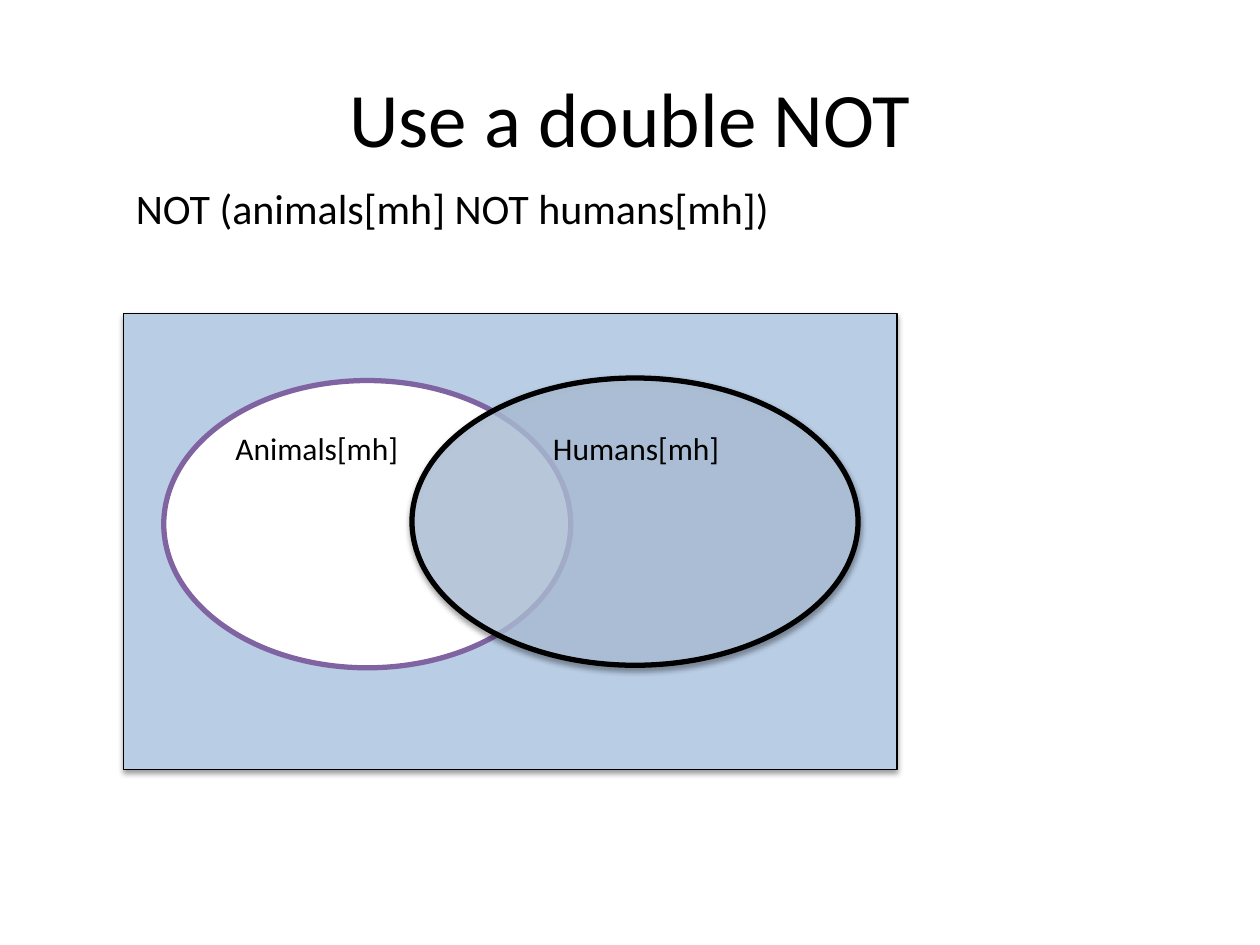
from lxml import etree
from pptx import Presentation
from pptx.dml.color import RGBColor
from pptx.enum.shapes import MSO_SHAPE
from pptx.enum.text import MSO_ANCHOR, MSO_AUTO_SIZE, PP_ALIGN
from pptx.oxml.ns import qn
from pptx.util import Inches, Pt

RECTANGLE, ELLIPSE = MSO_SHAPE.RECTANGLE, MSO_SHAPE.OVAL
TOP, MIDDLE = MSO_ANCHOR.TOP, MSO_ANCHOR.MIDDLE
LEFT, CENTER = PP_ALIGN.LEFT, PP_ALIGN.CENTER
FIXED, GROW = MSO_AUTO_SIZE.NONE, MSO_AUTO_SIZE.SHAPE_TO_FIT_TEXT
BLACK, WHITE, BLUE, PURPLE = "000000", "FFFFFF", "B9CDE5", "8064A2"


def color(value):
    return RGBColor.from_string(value)


def add_alpha(color_element, percent):
    etree.SubElement(color_element, qn("a:alpha"), val=str(percent * 1000))


presentation = Presentation()
presentation.slide_width = Inches(10)
presentation.slide_height = Inches(7.5)
slide = presentation.slides.add_slide(presentation.slide_layouts[6])

# Venn diagram: universe, animals, humans
diagram = [
    # kind, left, top, width, height, fill, opacity, line, line width, shadow
    (RECTANGLE, 0.98, 2.49, 6.14, 3.62, BLUE, 100, BLACK, 0.75, True),
    (ELLIPSE, 1.3, 3.02, 3.23, 2.28, WHITE, 100, PURPLE, 3, False),
    (ELLIPSE, 3.27, 3, 3.54, 2.28, BLUE, 75, BLACK, 3, True),
]
for kind, left, top, width, height, fill, opacity, line, line_width, shadow in diagram:
    shape = slide.shapes.add_shape(
        kind, Inches(left), Inches(top), Inches(width), Inches(height))
    shape.fill.solid()
    shape.fill.fore_color.rgb = color(fill)
    shape.line.color.rgb = color(line)
    shape.line.width = Pt(line_width)
    shape.shadow.inherit = False
    properties = shape.element.spPr
    if opacity < 100:
        add_alpha(properties.find(qn("a:solidFill")).find(qn("a:srgbClr")), opacity)
    if shadow:
        outer_shadow = etree.SubElement(
            properties.find(qn("a:effectLst")), qn("a:outerShdw"),
            blurRad=str(Pt(3.1)), dist=str(Pt(1.6)), dir=str(90 * 60000),
            rotWithShape="0")
        shadow_color = etree.SubElement(outer_shadow, qn("a:srgbClr"), val=BLACK)
        add_alpha(shadow_color, 38)

# Title, search string and set labels
label_frame = {"word_wrap": True, "auto_size": GROW, "vertical_anchor": TOP}
title_frame = {"word_wrap": True, "auto_size": FIXED, "vertical_anchor": MIDDLE}
search_frame = {"word_wrap": False, "auto_size": GROW, "vertical_anchor": TOP}
texts = [
    ("Use a double NOT", 0.5, 0.3, 9, 1.25, 44, CENTER, title_frame),
    ("NOT (animals[mh] NOT humans[mh])", 0.98, 1.4, 5.78, 0.5, 24, LEFT, search_frame),
    ("Animals[mh]", 1.77, 3.36, 1.73, 0.44, 18, LEFT, label_frame),
    ("Humans[mh]", 4.29, 3.36, 1.84, 0.44, 18, LEFT, label_frame),
]
for text, left, top, width, height, size, alignment, frame_format in texts:
    text_box = slide.shapes.add_textbox(
        Inches(left), Inches(top), Inches(width), Inches(height))
    for name, value in frame_format.items():
        setattr(text_box.text_frame, name, value)
    paragraph = text_box.text_frame.paragraphs[0]
    paragraph.text = text
    paragraph.alignment = alignment
    font = paragraph.runs[0].font
    for name, value in {"name": "Calibri", "size": Pt(size)}.items():
        setattr(font, name, value)
    font.color.rgb = color(BLACK)

presentation.save("out.pptx")
